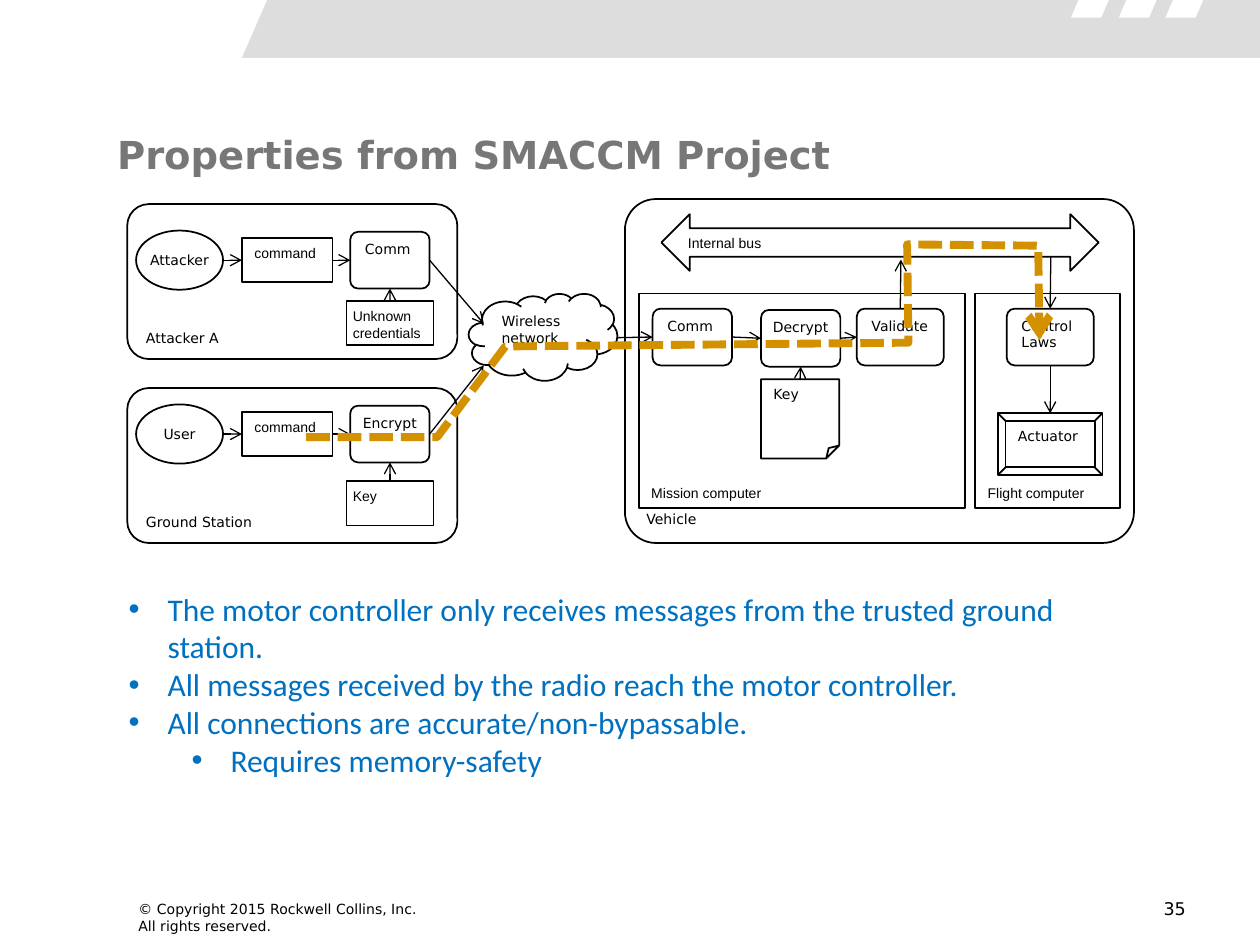
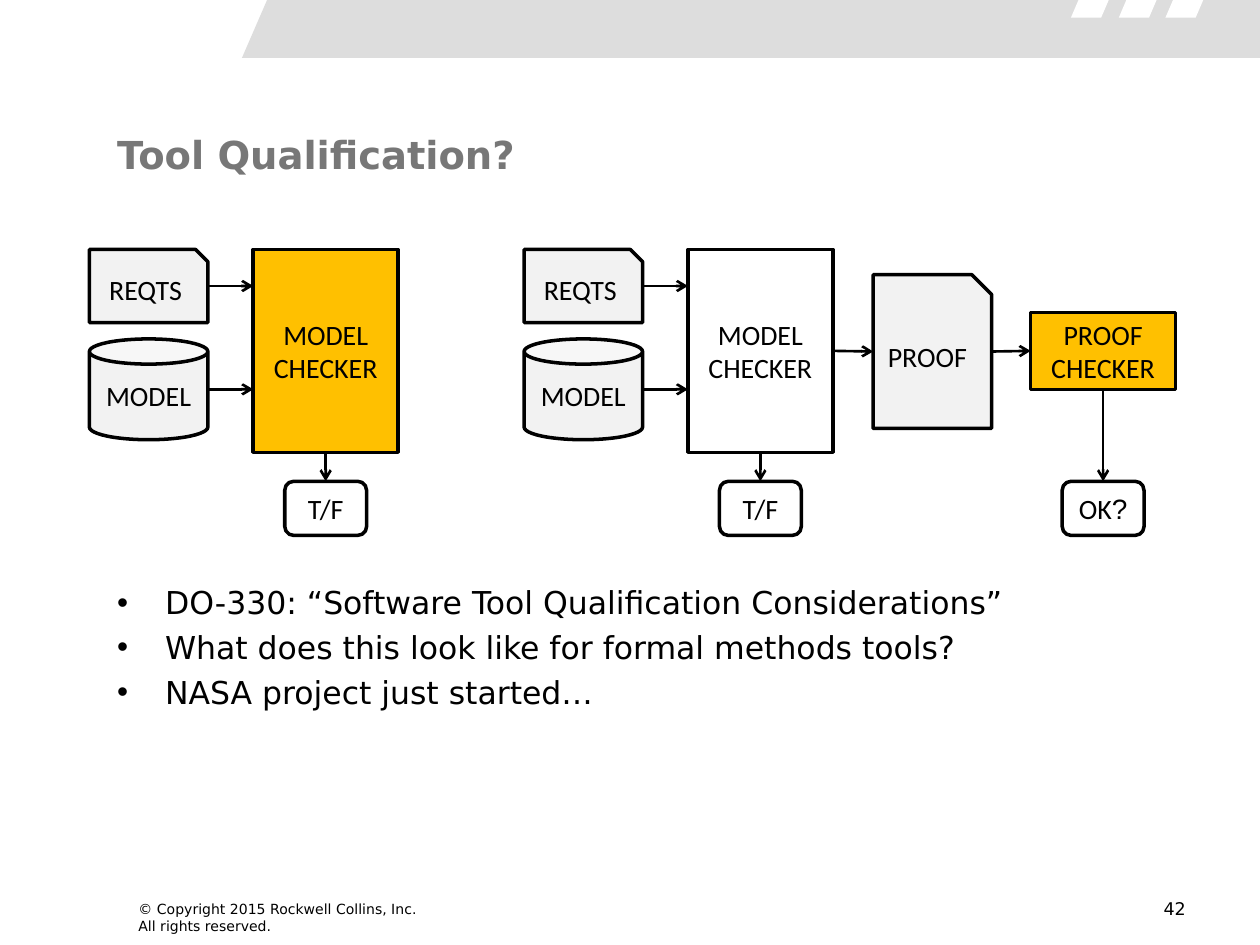
from dataclasses import dataclass
from typing import NamedTuple, Optional, Union

from lxml.etree import SubElement
from pptx import Presentation
from pptx.dml.color import RGBColor
from pptx.enum.dml import MSO_LINE
from pptx.enum.shapes import MSO_CONNECTOR, MSO_SHAPE as Kind
from pptx.enum.text import MSO_ANCHOR as Anchor, MSO_AUTO_SIZE as AutoSize, PP_ALIGN as Align
from pptx.oxml.ns import qn
from pptx.util import Inches, Pt

COLORS = {
    "ink": "000000",
    "title": "777777",
    "band": "DDDDDD",
    "white": "FFFFFF",
    "route": "D39100",
    "bullets": "0070C0",
    "trusted": "FFC000",
    "artifact": "F2F2F2",
}
DEJAVU, ARIAL, CALIBRI = "DejaVu Sans", "Arial", "Calibri"
TOP, LEFT, BOTTOM, RIGHT = range(4)
GLUED_KINDS = (Kind.RECTANGLE, Kind.ROUNDED_RECTANGLE)


@dataclass
class Node:
    kind: Kind
    text: str
    left: float
    top: float
    width: float
    height: float
    font: str = DEJAVU
    size: int = 8
    fill: Optional[str] = None
    weight: float = 1
    align: Align = Align.LEFT
    anchor: Anchor = Anchor.TOP
    inset: float = 0.1
    corner: Optional[float] = None


@dataclass
class Bullet:
    text: str
    indent: float
    hang: float
    level: int = 0


class Port(NamedTuple):
    shape: object
    side: int


class Point(NamedTuple):
    x: float
    y: float


End = Union[Port, Point]


def rgb(color: str) -> RGBColor:
    return RGBColor.from_string(COLORS[color])


def set_font(paragraph, name: str, size: float, color: str = "ink", bold: bool = False) -> None:
    font = paragraph.font
    font.name, font.size, font.bold = name, Pt(size), bold
    font.color.rgb = rgb(color)


def place(shape, left: float, top: float, width: float, height: float) -> None:
    shape.left, shape.top = Inches(left), Inches(top)
    shape.width, shape.height = Inches(width), Inches(height)


def add_arrowhead(shape) -> None:
    outline = shape._element.spPr.find(qn("a:ln"))
    SubElement(outline, qn("a:tailEnd"), type="arrow")


def draw_outline(slide, points: list[tuple[float, float]], closed: bool):
    (x, y), *rest = [(Inches(px), Inches(py)) for px, py in points]
    builder = slide.shapes.build_freeform(x, y)
    builder.add_line_segments(rest, close=closed)
    outline = builder.convert_to_shape()
    outline.shadow.inherit = False
    return outline


def draw_area(slide, points: list[tuple[float, float]], color: str) -> None:
    area = draw_outline(slide, points, True)
    area.fill.solid()
    area.fill.fore_color.rgb = rgb(color)
    area.line.fill.background()


def draw_node(slide, node: Node):
    shape = slide.shapes.add_shape(node.kind, Inches(node.left), Inches(node.top),
                                   Inches(node.width), Inches(node.height))
    shape.shadow.inherit = False
    if node.corner is not None:
        shape.adjustments[0] = node.corner
    if node.fill:
        shape.fill.solid()
        shape.fill.fore_color.rgb = rgb(node.fill)
    else:
        shape.fill.background()
    shape.line.color.rgb = rgb("ink")
    shape.line.width = Pt(node.weight)
    frame = shape.text_frame
    frame.word_wrap = True
    frame.vertical_anchor = node.anchor
    frame.margin_left = frame.margin_right = Inches(node.inset)
    frame.text = node.text
    frame.paragraphs[0].alignment = node.align
    set_font(frame.paragraphs[0], node.font, node.size)
    return shape


def locate(end: End) -> tuple[int, int]:
    if isinstance(end, Point):
        return Inches(end.x), Inches(end.y)
    shape, side = end
    across = {LEFT: 0, RIGHT: shape.width}.get(side, shape.width // 2)
    down = {TOP: 0, BOTTOM: shape.height}.get(side, shape.height // 2)
    return shape.left + across, shape.top + down


def link(slide, start: End, finish: End, weight: float = 0.75) -> None:
    arrow = slide.shapes.add_connector(MSO_CONNECTOR.STRAIGHT, *locate(start), *locate(finish))
    for end, join in ((start, arrow.begin_connect), (finish, arrow.end_connect)):
        if isinstance(end, Port) and end.shape.auto_shape_type in GLUED_KINDS:
            join(end.shape, end.side)
    arrow.line.color.rgb = rgb("ink")
    arrow.line.width = Pt(weight)
    add_arrowhead(arrow)
    SubElement(arrow._element.spPr, qn("a:effectLst"))


def add_label(slide, text: str, left: float, top: float, width: float, height: float,
              size: float, align: Align, wrap: bool) -> None:
    label = slide.shapes.add_textbox(Inches(left), Inches(top), Inches(width), Inches(height))
    label.text_frame.word_wrap = wrap
    label.text_frame.text = text
    for paragraph in label.text_frame.paragraphs:
        paragraph.alignment = align
        set_font(paragraph, DEJAVU, size)


def start_slide(deck, title: str, number: int):
    slide = deck.slides.add_slide(deck.slide_layouts[1])
    draw_area(slide, [(1.92, 0.46), (10, 0.46), (10, 0), (2.12, 0)], "band")
    for x in (8.5, 8.88, 9.25):
        draw_area(slide, [(x, 0.14), (x + 0.06, 0), (x + 0.3, 0), (x + 0.24, 0.14)], "white")
    heading = slide.shapes.title
    place(heading, 0.83, 0.95, 8.5, 0.55)
    frame = heading.text_frame
    frame.text = title
    frame.auto_size = AutoSize.NONE
    frame.vertical_anchor = Anchor.MIDDLE
    frame.paragraphs[0].alignment = Align.LEFT
    set_font(frame.paragraphs[0], DEJAVU, 22, "title", True)
    add_label(slide, "© Copyright 2015 Rockwell Collins, Inc.\nAll rights reserved.",
              1, 7.1, 2.49, 0.37, 8, Align.LEFT, False)
    add_label(slide, str(number), 8.58, 7.08, 0.93, 0.27, 10, Align.RIGHT, True)
    return slide


def fill_body(slide, box: tuple[float, float, float, float], bullets: list[Bullet],
              font: str, color: str, gap: float) -> None:
    body = slide.placeholders[1]
    place(body, *box)
    frame = body.text_frame
    frame.text = "\n".join(bullet.text for bullet in bullets)
    frame.auto_size = AutoSize.NONE
    for index, (paragraph, bullet) in enumerate(zip(frame.paragraphs, bullets)):
        paragraph.level = bullet.level
        paragraph.space_before = Pt(gap if index else 0)
        properties = paragraph._p.get_or_add_pPr()
        properties.set("marL", str(Inches(bullet.indent)))
        properties.set("indent", str(-Inches(bullet.hang)))
        SubElement(properties, qn("a:buFont"), typeface=ARIAL)
        SubElement(properties, qn("a:buChar"), char="•")
        set_font(paragraph, font, 18, color)


def draw_station(slide, name: str, sender: str, radio: str, credentials: str, radio_style: dict,
                 frame_top: float, middle: float, key_top: float):
    draw_node(slide, Node(Kind.ROUNDED_RECTANGLE, name, 1.01, frame_top, 2.62, 1.23,
                          anchor=Anchor.BOTTOM, corner=0.139))
    person = draw_node(slide, Node(Kind.OVAL, sender, 1.08, middle - 0.23, 0.69, 0.47,
                                   align=Align.CENTER, anchor=Anchor.MIDDLE, inset=0))
    command = draw_node(slide, Node(Kind.RECTANGLE, "command", 1.92, middle - 0.17, 0.72, 0.35,
                                    font=ARIAL))
    comm = draw_node(slide, Node(Kind.ROUNDED_RECTANGLE, radio, 2.78, middle - 0.22, 0.63, 0.45,
                                 corner=0.139, **radio_style))
    key = draw_node(slide, Node(Kind.RECTANGLE, credentials, 2.75, key_top, 0.69, 0.35,
                                font=ARIAL, inset=0.05))
    link(slide, Port(person, RIGHT), Port(command, LEFT))
    link(slide, Port(command, RIGHT), Port(comm, LEFT))
    link(slide, Port(key, TOP), Port(comm, BOTTOM))
    return comm


def build_properties(deck) -> None:
    slide = start_slide(deck, "Properties from SMACCM Project", 35)
    centered = {"align": Align.CENTER, "inset": 0}
    attacker = draw_station(slide, "Attacker A", "Attacker", "Comm", "Unknown credentials", {},
                            1.62, 2.06, 2.39)
    encrypt = draw_station(slide, "Ground Station", "User", "Encrypt", "Key", centered,
                           3.08, 3.44, 3.82)
    draw_node(slide, Node(Kind.CLOUD, "Wireless network", 3.72, 2.33, 1.18, 0.69))

    draw_node(slide, Node(Kind.ROUNDED_RECTANGLE, "Vehicle", 4.96, 1.58, 4.04, 2.73,
                          anchor=Anchor.BOTTOM, corner=0.09))
    for computer, left, width in (("Mission computer", 5.07, 2.59), ("Flight computer", 7.74, 1.15)):
        draw_node(slide, Node(Kind.RECTANGLE, computer, left, 2.33, width, 1.7,
                              font=ARIAL, anchor=Anchor.BOTTOM))
    draw_node(slide, Node(Kind.LEFT_RIGHT_ARROW, "Internal bus", 5.25, 1.7, 3.47, 0.45, font=ARIAL))
    comm, decrypt, validate, control = (
        draw_node(slide, Node(Kind.ROUNDED_RECTANGLE, text, left, top, width, 0.45,
                              corner=0.139, **style))
        for text, left, top, width, style in (
            ("Comm", 5.18, 2.45, 0.63, {}),
            ("Decrypt", 6.04, 2.46, 0.63, centered),
            ("Validate", 6.8, 2.45, 0.69, {}),
            ("Control Laws", 7.99, 2.45, 0.69, {}),
        )
    )
    key = draw_node(slide, Node(Kind.FOLDED_CORNER, "Key", 6.04, 3.01, 0.62, 0.63))
    actuator = draw_node(slide, Node(Kind.BEVEL, "Actuator", 7.92, 3.28, 0.83, 0.49))

    for start, finish in (
        (Port(attacker, RIGHT), Point(3.84, 2.57)),
        (Port(encrypt, RIGHT), Point(3.84, 2.9)),
        (Point(4.9, 2.68), Port(comm, LEFT)),
        (Port(comm, RIGHT), Port(decrypt, LEFT)),
        (Port(decrypt, RIGHT), Port(validate, LEFT)),
        (Port(key, TOP), Port(decrypt, BOTTOM)),
        (Port(validate, TOP), Point(7.15, 2.06)),
        (Point(8.34, 2.04), Port(control, TOP)),
        (Port(control, BOTTOM), Port(actuator, TOP)),
    ):
        link(slide, start, finish)

    route = draw_outline(slide, [(2.43, 3.47), (3.47, 3.47), (4.01, 2.75), (7.21, 2.72),
                                 (7.2, 1.94), (8.24, 1.95), (8.25, 2.7)], False)
    route.fill.background()
    route.line.color.rgb = rgb("route")
    route.line.width = Pt(4.5)
    route.line.dash_style = MSO_LINE.SQUARE_DOT
    add_arrowhead(route)

    fill_body(slide, (0.92, 4.63, 8.08, 1.62), [
        Bullet("The motor controller only receives messages from the trusted ground station.", 0.31, 0.31),
        Bullet("All messages received by the radio reach the motor controller.", 0.31, 0.31),
        Bullet("All connections are accurate/non-bypassable.", 0.31, 0.31),
        Bullet("Requires memory-safety", 0.81, 0.31, 1),
    ], CALIBRI, "bullets", 0)


def draw_step(slide, kind: Kind, text: str, left: float, top: float, width: float, height: float,
              fill: Optional[str] = None, inset: float = 0.1):
    return draw_node(slide, Node(kind, text, left, top, width, height, CALIBRI, 16, fill, 2,
                                 Align.CENTER, Anchor.MIDDLE, inset))


def draw_model_checker(slide, left: float, fill: Optional[str]):
    checker = draw_step(slide, Kind.RECTANGLE, "MODEL CHECKER", left + 1.3, 1.98, 1.15, 1.61, fill)
    reqts = draw_step(slide, Kind.SNIP_1_RECTANGLE, "REQTS", left, 1.98, 0.94, 0.58, "artifact", 0)
    model = draw_step(slide, Kind.CAN, "MODEL", left, 2.69, 0.94, 0.8, "artifact")
    verdict = draw_step(slide, Kind.ROUNDED_RECTANGLE, "T/F", left + 1.55, 3.82, 0.65, 0.43)
    link(slide, Port(reqts, RIGHT), Point(left + 1.3, 2.27), 1.5)
    link(slide, Port(model, RIGHT), Point(left + 1.3, 3.09), 1.5)
    link(slide, Port(checker, BOTTOM), Port(verdict, TOP), 1.5)
    return checker


def build_qualification(deck) -> None:
    slide = start_slide(deck, "Tool Qualification?", 42)
    draw_model_checker(slide, 0.71, "trusted")
    checker = draw_model_checker(slide, 4.16, None)
    proof = draw_step(slide, Kind.SNIP_1_RECTANGLE, "PROOF", 6.93, 2.18, 0.94, 1.22, "artifact", 0)
    proof_checker = draw_step(slide, Kind.RECTANGLE, "PROOF CHECKER", 8.18, 2.48, 1.15, 0.61, "trusted")
    approval = draw_step(slide, Kind.ROUNDED_RECTANGLE, "OK", 8.43, 3.82, 0.65, 0.43, inset=0)
    question = approval.text_frame.paragraphs[0].add_run()
    question.text = "?"
    question.font.name = ARIAL
    link(slide, Port(checker, RIGHT), Port(proof, LEFT), 1.5)
    link(slide, Port(proof, RIGHT), Port(proof_checker, LEFT), 1.5)
    link(slide, Port(proof_checker, BOTTOM), Port(approval, TOP), 1.5)
    fill_body(slide, (0.83, 4.58, 8.67, 2.12), [
        Bullet("DO-330: “Software Tool Qualification Considerations”", 0.38, 0.38),
        Bullet("What does this look like for formal methods tools?", 0.38, 0.38),
        Bullet("NASA project just started…", 0.38, 0.38),
    ], DEJAVU, "ink", 4)


def main() -> None:
    deck = Presentation()
    deck.slide_width, deck.slide_height = Inches(10), Inches(7.5)
    build_properties(deck)
    build_qualification(deck)
    deck.save("out.pptx")


if __name__ == "__main__":
    main()
